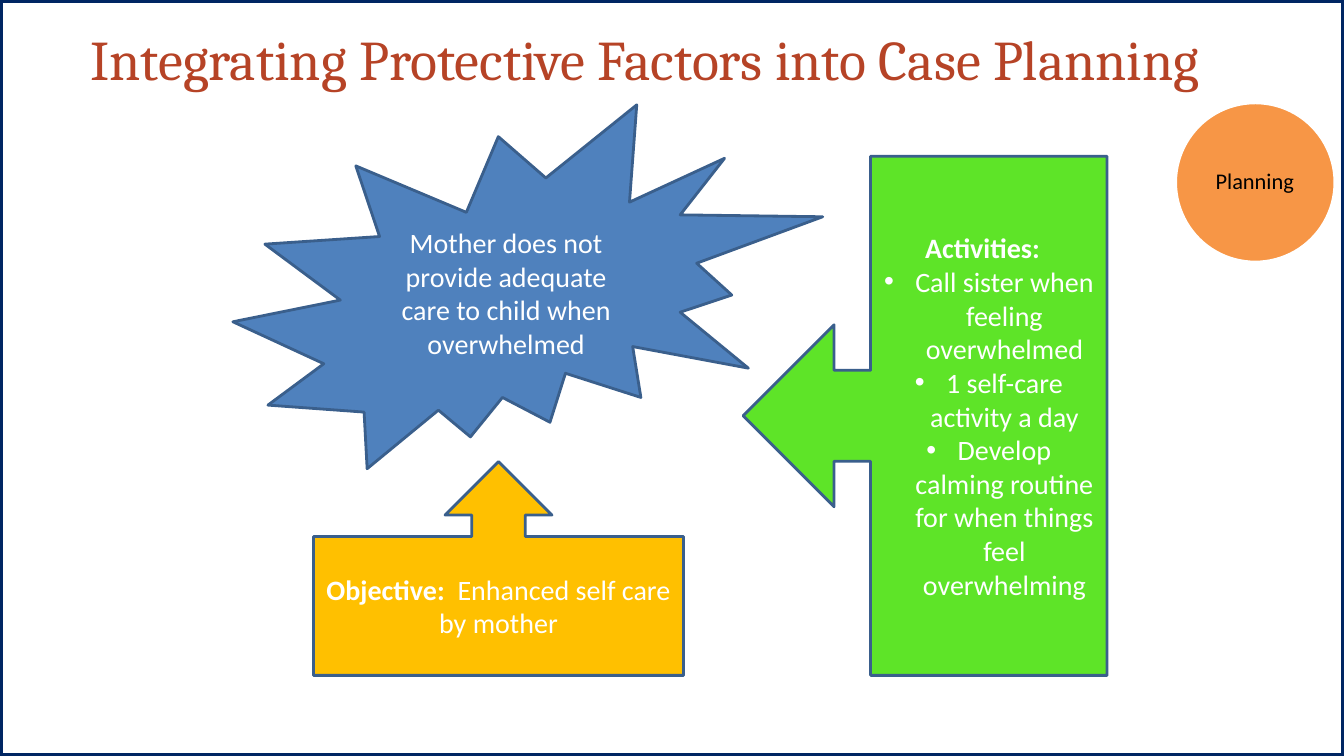
from lxml.etree import SubElement
from pptx import Presentation
from pptx.dml.color import RGBColor
from pptx.enum.shapes import MSO_SHAPE as Preset
from pptx.enum.text import MSO_ANCHOR as Anchor, PP_ALIGN as Align
from pptx.oxml.ns import qn
from pptx.util import Pt

PX = 9144  # EMU per px, 100 px to the inch
COLORS = {
    "frame": "002663", "title": "B64326", "stage": "F79646",
    "problem": "4F81BD", "objective": "FFC000", "activities": "5EE428",
    "outline": "3A5F8C", "white": "FFFFFF", "black": "000000",
}
ACTIVITIES = [
    "Call sister when feeling overwhelmed",
    "1 self-care activity a day",
    "Develop calming routine for when things feel overwhelming",
]


def color(name):
    return RGBColor.from_string(COLORS[name])


def emu(box):
    return [length * PX for length in box]


def style(paragraph, size, ink, font="Calibri"):
    paragraph.alignment = Align.CENTER
    paragraph.font.size = Pt(size)
    paragraph.font.name = font
    paragraph.font.color.rgb = color(ink)


def add_runs(paragraph, heading, body=""):
    """Write a bold heading followed by regular text."""
    for text, bold in ((heading, True), (body, False)):
        if text:
            run = paragraph.add_run()
            run.text = text
            run.font.bold = bold


def add_bullet(paragraph, indent):
    properties = paragraph._p.get_or_add_pPr()
    properties.set("marL", str(indent * PX))
    properties.set("indent", str(-indent * PX))
    SubElement(properties, qn("a:buFont"), typeface="Arial")
    SubElement(properties, qn("a:buChar"), char="•")


def add_panel(slide, preset, box, fill, outline="outline", width=2):
    panel = slide.shapes.add_shape(preset, *emu(box))
    panel.shadow.inherit = False
    if fill:
        panel.fill.solid()
        panel.fill.fore_color.rgb = color(fill)
    else:
        panel.fill.background()
    panel.line.color.rgb = color(outline)
    panel.line.width = Pt(width)
    frame = panel.text_frame
    frame.word_wrap = True
    frame.vertical_anchor = Anchor.MIDDLE
    style(frame.paragraphs[0], 20, "white")
    return frame


def set_title(slide, text):
    title = slide.shapes.title
    title.left, title.top, title.width, title.height = emu((0, 12, 1279, 92))
    title.text_frame.text = text
    title.text_frame.vertical_anchor = Anchor.MIDDLE
    style(title.text_frame.paragraphs[0], 40, "title", "Cambria")


def add_stage(slide, text):
    add_panel(slide, Preset.OVAL, (1166, 102, 158, 158), "stage", "white")
    label = slide.shapes.add_textbox(*emu((1189, 125, 111, 111))).text_frame
    label.word_wrap = True
    label.vertical_anchor = Anchor.MIDDLE
    label.margin_left = label.margin_right = 2 * PX
    label.margin_top = label.margin_bottom = 2 * PX
    label.text = text
    style(label.paragraphs[0], 16, "black")
    label.paragraphs[0].line_spacing = 0.9


def add_activities(slide):
    frame = add_panel(slide, Preset.LEFT_ARROW_CALLOUT,
                      (737, 155, 361, 515), "activities")
    add_runs(frame.paragraphs[0], "Activities:  ")
    for activity in ACTIVITIES:
        paragraph = frame.add_paragraph()
        paragraph.text = activity
        style(paragraph, 20, "white")
        add_bullet(paragraph, 31)


def main():
    deck = Presentation()
    deck.slide_width, deck.slide_height = emu((1333, 750))
    slide = deck.slides.add_slide(deck.slide_layouts[5])
    add_panel(slide, Preset.RECTANGLE, (0, 0, 1333, 750), None, "frame", 4.5)
    set_title(slide, "Integrating Protective Factors into Case Planning")
    add_stage(slide, "Planning")
    problem = add_panel(slide, Preset.EXPLOSION2, (231, 104, 585, 361), "problem")
    problem.paragraphs[0].add_run().text = (
        "Mother does not provide adequate care to child when overwhelmed")
    objective = add_panel(slide, Preset.UP_ARROW_CALLOUT,
                          (311, 458, 367, 212), "objective")
    add_runs(objective.paragraphs[0], "Objective:  ", "Enhanced self care by mother")
    add_activities(slide)
    deck.save("out.pptx")


if __name__ == "__main__":
    main()
